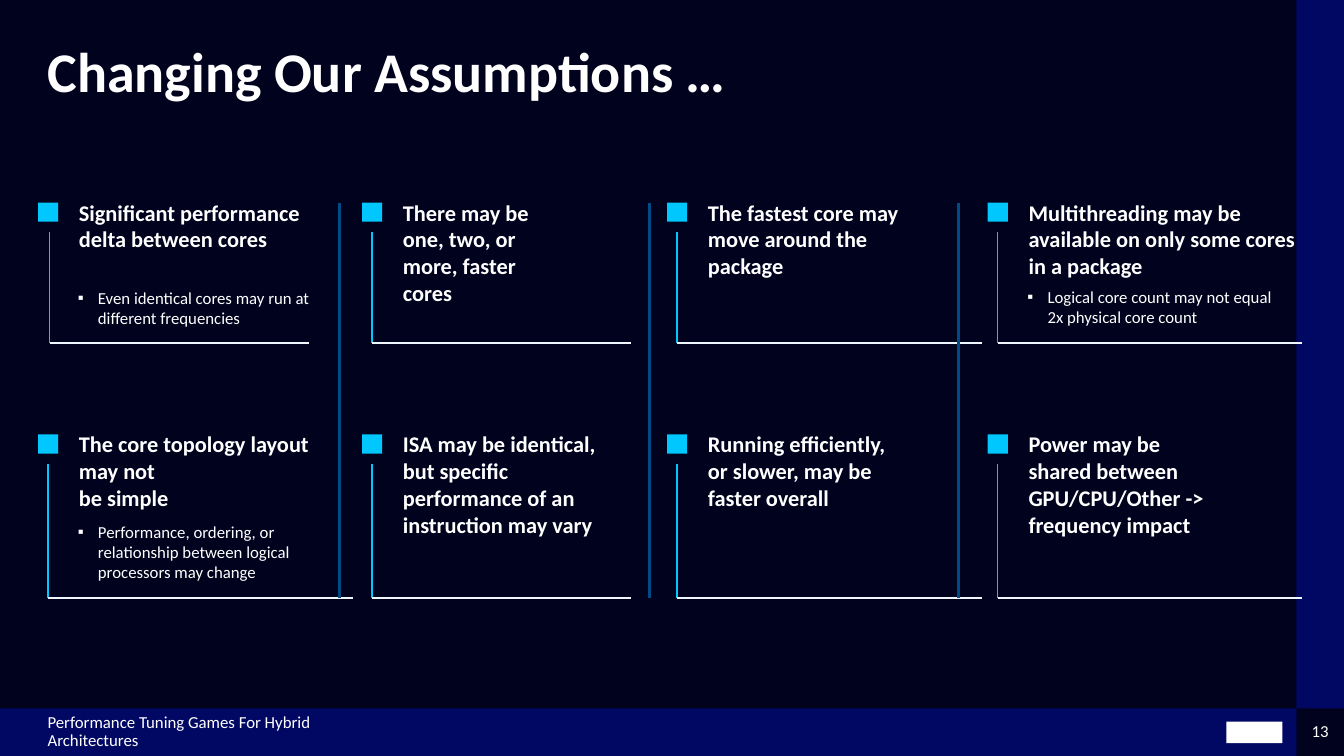
from dataclasses import dataclass

from lxml.etree import SubElement
from pptx import Presentation
from pptx.dml.color import RGBColor
from pptx.enum.shapes import MSO_CONNECTOR, MSO_SHAPE
from pptx.enum.text import MSO_ANCHOR, PP_ALIGN
from pptx.oxml.ns import qn
from pptx.util import Pt

NIGHT = RGBColor(0x00, 0x02, 0x1E)
NAVY = RGBColor(0x00, 0x08, 0x64)
WHITE = RGBColor(0xFF, 0xFF, 0xFF)
CYAN = RGBColor(0x00, 0xC7, 0xFD)
PALE = RGBColor(0xEE, 0xF7, 0xFF)
BLUE = RGBColor(0x00, 0x4A, 0x86)

FONT = "Calibri"
SLIDE_WIDTH, SLIDE_HEIGHT = 960, 540
BAND = 34
INSETS = (7.2, 3.6)

COLUMN_LEFTS = (27.2, 258.6, 476.5, 705.5)
ROW_TOPS = (144.7, 310.3)
ROW_BOTTOMS = (245, 427.2)
DIVIDER_LEFTS = (242.6, 463.7, 684.7)
NARROW, WIDE = 185, 217.7


@dataclass
class Card:
    heading: str
    heading_width: float
    rule_width: float
    detail: str = ""
    detail_offset: float = 57.3
    rule_offset: float = 7.1


CARD_ROWS = (
    (
        Card("Significant performance delta between cores", 189.4, NARROW,
             "Even identical cores may run at different frequencies", rule_offset=8.2),
        Card("There may be one, two, or more, faster cores", 118.8, NARROW),
        Card("The fastest core may move around the package", 158, WIDE),
        Card("Multithreading may be available on only some cores in a package", 210.2, WIDE,
             "Logical core count may not equal 2x physical core count", 56.7),
    ),
    (
        Card("The core topology layout may not \nbe simple", 189.4, WIDE,
             "Performance, ordering, or relationship between logical processors may change", 58.6),
        Card("ISA may be identical, but specific performance of an instruction may vary",
             165.6, NARROW),
        Card("Running efficiently, or slower, may be faster overall", 158, WIDE),
        Card("Power may be \nshared between GPU/CPU/Other -> frequency impact", 189.4, WIDE),
    ),
)


def add_box(slide, left, top, width, height, color):
    shape = slide.shapes.add_shape(
        MSO_SHAPE.RECTANGLE, Pt(left), Pt(top), Pt(width), Pt(height))
    shape.shadow.inherit = False
    shape.fill.solid()
    shape.fill.fore_color.rgb = color
    shape.line.fill.background()


def add_line(slide, start, end, color, weight=1):
    connector = slide.shapes.add_connector(
        MSO_CONNECTOR.STRAIGHT, *(Pt(value) for value in (*start, *end)))
    connector.line.color.rgb = color
    connector.line.width = Pt(weight)
    SubElement(connector._element.spPr, qn("a:effectLst"))


def add_text(slide, text, left, top, width, height, size, bold=False,
             insets=(0, 0), anchor=MSO_ANCHOR.TOP, spacing=None):
    """Add a one-paragraph text box and return the paragraph."""
    box = slide.shapes.add_textbox(Pt(left), Pt(top), Pt(width), Pt(height))
    frame = box.text_frame
    frame.word_wrap = True
    frame.vertical_anchor = anchor
    frame.margin_left = frame.margin_right = Pt(insets[0])
    frame.margin_top = frame.margin_bottom = Pt(insets[1])
    paragraph = frame.paragraphs[0]
    paragraph.text = text
    paragraph.line_spacing = spacing
    paragraph.font.name = FONT
    paragraph.font.size = Pt(size)
    paragraph.font.bold = bold
    paragraph.font.color.rgb = WHITE
    return paragraph


def add_bullet(paragraph, indent):
    properties = paragraph._p.get_or_add_pPr()
    properties.set("marL", str(Pt(indent)))
    properties.set("indent", str(-Pt(indent)))
    color = SubElement(properties, qn("a:buClr"))
    SubElement(color, qn("a:srgbClr"), val=str(WHITE))
    SubElement(properties, qn("a:buFont"), typeface="Arial")
    SubElement(properties, qn("a:buChar"), char="▪")
    # The schema wants default run properties after the bullet.
    properties.append(properties.find(qn("a:defRPr")))


def add_frame(slide, width, height):
    """Add the navy edge bands, the footer, the logo block and the page number."""
    right, bottom = width - BAND, height - BAND
    add_box(slide, 0, bottom, right, BAND, NAVY)
    add_box(slide, right, 0, BAND, bottom, NAVY)
    add_box(slide, right - 50, bottom + 9.4, 40, 15.5, WHITE)
    add_text(slide, "Performance Tuning Games For Hybrid Architectures",
             34, bottom, 253.4, BAND, 12, anchor=MSO_ANCHOR.MIDDLE, spacing=0.9)
    number = add_text(slide, "13", right, bottom, BAND, BAND, 12,
                      anchor=MSO_ANCHOR.MIDDLE, spacing=0.9)
    number.alignment = PP_ALIGN.CENTER


def add_card(slide, card, left, top, bottom):
    add_text(slide, card.heading, left + 22.1, top - 6.3, card.heading_width, 65.5,
             16, bold=True, insets=INSETS)
    if card.detail:
        detail = add_text(slide, card.detail, left + 21.3, top + card.detail_offset,
                          197.3, 36, 12, insets=INSETS)
        add_bullet(detail, 14.4)
    add_box(slide, left, top, 14.4, 13.7, CYAN)
    rule_left = left + card.rule_offset
    add_line(slide, (rule_left, top + 20.9), (rule_left, bottom), CYAN)
    add_line(slide, (rule_left, bottom), (rule_left + card.rule_width, bottom), PALE)


def add_card_grid(slide):
    for cards, top, bottom in zip(CARD_ROWS, ROW_TOPS, ROW_BOTTOMS):
        for card, left in zip(cards, COLUMN_LEFTS):
            add_card(slide, card, left, top, bottom)
    for left in DIVIDER_LEFTS:
        add_line(slide, (left, ROW_TOPS[0]), (left, ROW_BOTTOMS[-1]), BLUE, 2.25)


def main():
    presentation = Presentation()
    presentation.slide_width = Pt(SLIDE_WIDTH)
    presentation.slide_height = Pt(SLIDE_HEIGHT)
    slide = presentation.slides.add_slide(presentation.slide_layouts[6])
    slide.background.fill.solid()
    slide.background.fill.fore_color.rgb = NIGHT
    add_frame(slide, SLIDE_WIDTH, SLIDE_HEIGHT)
    add_text(slide, "Changing Our Assumptions …", 34, 34, 857.5, 96.5, 40,
             bold=True, spacing=0.83)
    add_card_grid(slide)
    presentation.save("out.pptx")


if __name__ == "__main__":
    main()
